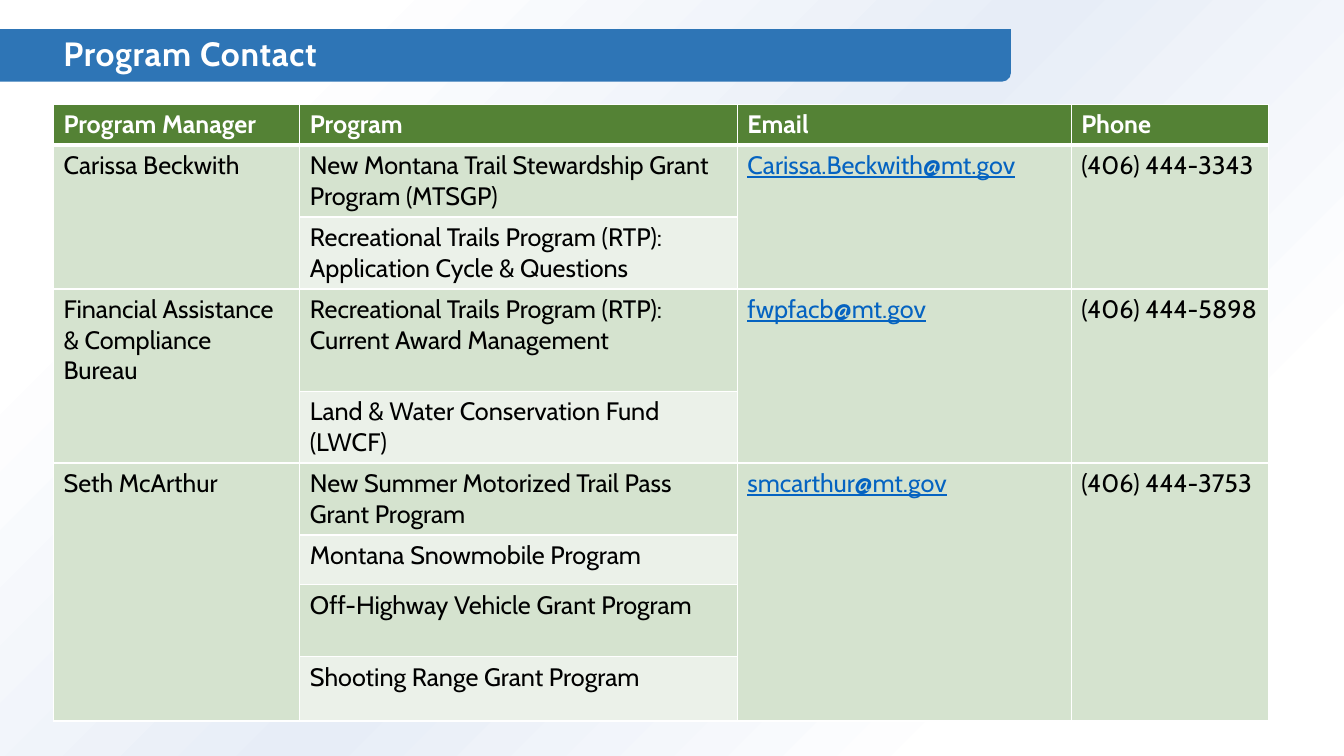
from copy import deepcopy
from lxml.etree import SubElement
from pptx import Presentation
from pptx.dml.color import RGBColor
from pptx.enum.shapes import MSO_SHAPE
from pptx.enum.text import MSO_ANCHOR
from pptx.oxml.ns import qn
from pptx.util import Pt

TITLE = "Program Contact"
HEADS = ["Program Manager", "Program", "Email", "Phone"]
STAFF = [
    ("Carissa Beckwith", "Carissa.Beckwith@mt.gov", "(406) 444-3343", [
        "New Montana Trail Stewardship Grant Program (MTSGP)",
        "Recreational Trails Program (RTP): Application Cycle & Questions"]),
    ("Financial Assistance & Compliance Bureau", "fwpfacb@mt.gov",
     "(406) 444-5898", [
         "Recreational Trails Program (RTP): Current Award Management",
         "Land & Water Conservation Fund (LWCF)"]),
    ("Seth McArthur", "smcarthur@mt.gov", "(406) 444-3753", [
        "New Summer Motorized Trail Pass Grant Program",
        "Montana Snowmobile Program",
        "Off-Highway Vehicle Grant Program",
        "Shooting Range Grant Program"]),
]
WIDTHS = [176, 312.5, 238.5, 141]
HEIGHTS = [29, 51.4, 51.4, 73, 51.4, 51.4, 35.5, 51.4, 46]

FONT = "Cabin"
WHITE = RGBColor(0xFF, 0xFF, 0xFF)
BLACK = RGBColor(0, 0, 0)
PALE = RGBColor(0xE7, 0xED, 0xF7)
BLUE = RGBColor(0x2E, 0x75, 0xB6)
LINK = RGBColor(0x05, 0x63, 0xC1)
GREEN = RGBColor(0x54, 0x82, 0x35)
BANDS = [RGBColor(0xD5, 0xE3, 0xCF), RGBColor(0xEB, 0xF1, 0xE9)]
STOPS = [(0.19, WHITE), (0.5, PALE), (0.83, WHITE)]

WIDE, HIGH = 960, 540
LEFT, TOP = 38.2, 74.6


def add_run(frame, text, size, color, bold=False, under=False):
    run = frame.paragraphs[0].add_run()
    run.text = text
    font = run.font
    font.name, font.size, font.bold = FONT, Pt(size), bold
    font.underline = under
    font.color.rgb = color
    return run


def add_block(slide, kind, left, top, width, height):
    shape = slide.shapes.add_shape(
        kind, Pt(left), Pt(top), Pt(width), Pt(height))
    shape.shadow.inherit = False
    shape.line.fill.background()
    return shape


def add_back(slide):
    back = add_block(slide, MSO_SHAPE.RECTANGLE, 0, 0, WIDE, HIGH)
    back.fill.gradient()
    back.fill.gradient_angle = 135
    stops = next(back.element.iter(qn("a:gsLst")))
    stops.append(deepcopy(stops[0]))
    for stop, (place, color) in zip(back.fill.gradient_stops, STOPS):
        stop.position = place
        stop.color.rgb = color


def add_title(slide):
    bar = add_block(slide, MSO_SHAPE.ROUND_2_DIAG_RECTANGLE,
                    -13.7, 20.9, 735.8, 37.4)
    bar.fill.solid()
    bar.fill.fore_color.rgb = BLUE
    box = slide.shapes.add_textbox(Pt(LEFT), Pt(23), Pt(922), Pt(33.8))
    frame = box.text_frame
    frame.word_wrap = True
    frame.vertical_anchor = MSO_ANCHOR.MIDDLE
    frame.paragraphs[0].line_spacing = 0.9
    run = add_run(frame, TITLE, 24, WHITE, bold=True)
    run.font.element.set("spc", "50") if hasattr(run.font, "element") else \
        run.font._element.set("spc", "50")


def add_edges(cell, row):
    """Draw white cell borders, thicker below the header row."""
    sizes = {"L": 1, "R": 1, "T": 3 if row == 1 else 1,
             "B": 3 if row == 0 else 1}
    props = cell._tc.get_or_add_tcPr()
    for spot, (side, size) in enumerate(sizes.items()):
        line = SubElement(props, qn(f"a:ln{side}"), w=str(Pt(size)))
        fill = SubElement(line, qn("a:solidFill"))
        SubElement(fill, qn("a:srgbClr"), val=str(WHITE))
        props.insert(spot, line)


def add_table(slide):
    frame = slide.shapes.add_table(
        len(HEIGHTS), len(WIDTHS), Pt(LEFT), Pt(TOP),
        Pt(sum(WIDTHS)), Pt(sum(HEIGHTS)))
    table = frame.table
    table.horz_banding = False
    for col, width in zip(table.columns, WIDTHS):
        col.width = Pt(width)
    for row, height in zip(table.rows, HEIGHTS):
        row.height = Pt(height)

    def put(row, col, text, color, bold=False, under=False):
        add_run(table.cell(row, col).text_frame, text, 18, color, bold, under)

    for col, head in enumerate(HEADS):
        put(0, col, head, WHITE, bold=True)
    fills = [GREEN]
    row = 1
    for name, mail, phone, plans in STAFF:
        last = row + len(plans) - 1
        for col, text in ((0, name), (2, mail), (3, phone)):
            table.cell(row, col).merge(table.cell(last, col))
            put(row, col, text, LINK if col == 2 else BLACK, under=col == 2)
        for step, plan in enumerate(plans):
            put(row + step, 1, plan, BLACK)
            fills.append(BANDS[step % 2])
        row = last + 1

    for row, color in enumerate(fills):
        for col in range(len(WIDTHS)):
            cell = table.cell(row, col)
            cell.fill.solid()
            cell.fill.fore_color.rgb = (
                color if row == 0 or col == 1 else BANDS[0])
            add_edges(cell, row)


def main():
    deck = Presentation()
    deck.slide_width, deck.slide_height = Pt(WIDE), Pt(HIGH)
    slide = deck.slides.add_slide(deck.slide_layouts[6])
    add_back(slide)
    add_title(slide)
    add_table(slide)
    deck.save("out.pptx")


if __name__ == "__main__":
    main()
